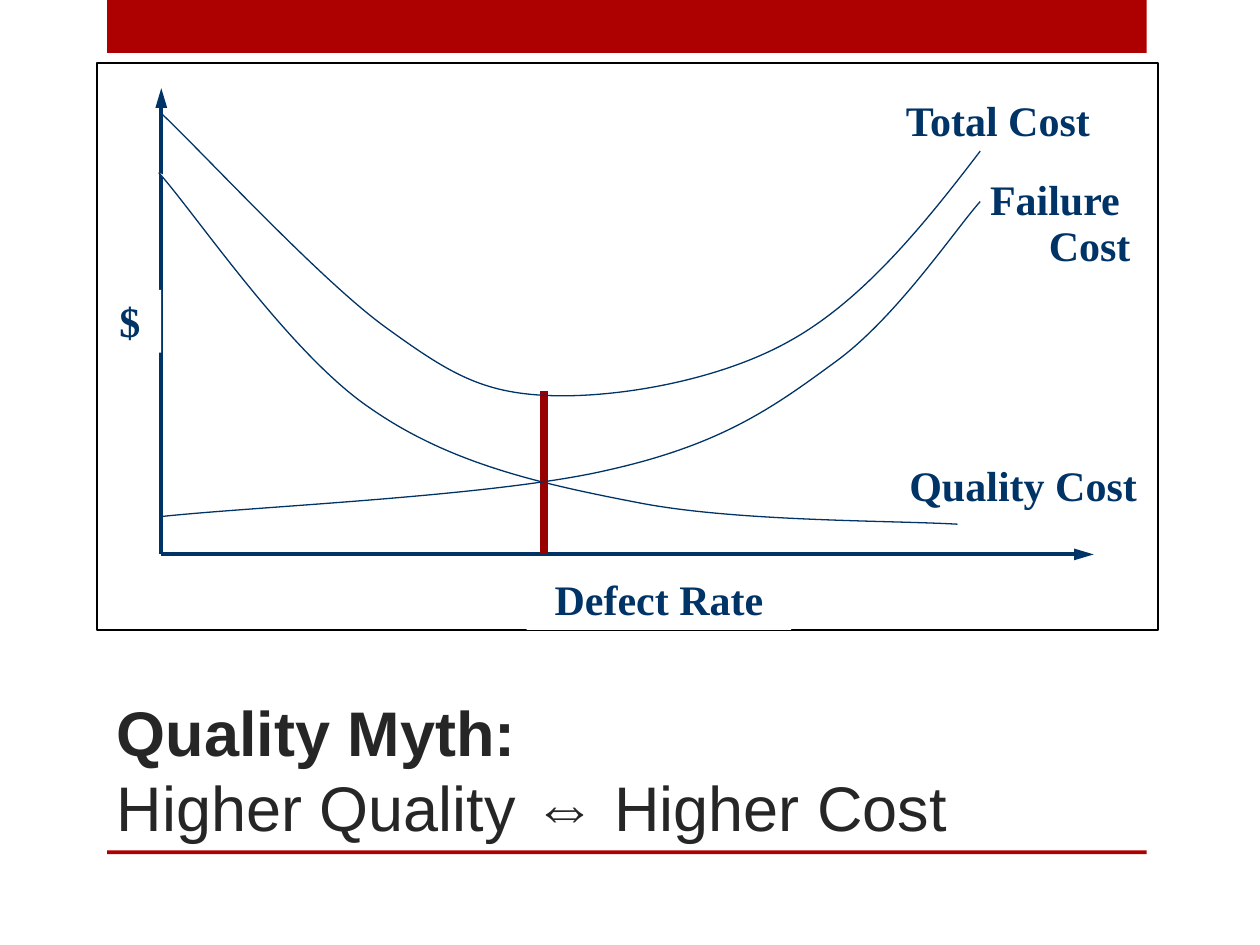
from typing import NamedTuple, Optional

from lxml.etree import SubElement as Sub
from pptx import Presentation as Deck
from pptx.dml.color import RGBColor as Rgb
from pptx.enum.shapes import MSO_CONNECTOR as Wire, MSO_SHAPE as Form
from pptx.enum.text import MSO_ANCHOR as Anchor, MSO_AUTO_SIZE as Auto, PP_ALIGN as Align
from pptx.oxml.ns import qn
from pptx.util import Pt

PX = 9144
NAVY, RED, WHITE = "003366", "AD0101", "FFFFFF"


class Box(NamedTuple):
    x: int
    y: int
    w: int
    h: int
    fill: str
    line: Optional[str] = None


class Label(NamedTuple):
    x: int
    y: int
    w: int
    h: int
    lines: tuple
    fill: Optional[str] = None
    align: Align = Align.CENTER
    pitch: Optional[float] = None


class Line(NamedTuple):
    start: tuple
    end: tuple
    color: str
    width: float
    arrow: bool = False


class Curve(NamedTuple):
    points: tuple
    fill: Optional[str] = None


class Part(NamedTuple):
    text: str
    bold: bool


def px(*nums: int) -> list:
    return [n * PX for n in nums]


def hue(code: str) -> Rgb:
    return Rgb.from_string(code)


def paint(shape, fill: Optional[str], line: Optional[str] = None) -> None:
    shape.shadow.inherit = False
    if fill:
        shape.fill.solid()
        shape.fill.fore_color.rgb = hue(fill)
    else:
        shape.fill.background()
    if line:
        shape.line.color.rgb = hue(line)
        shape.line.width = Pt(0.75)
    else:
        shape.line.fill.background()


def write(para, text: str, size: int, face: str, color: str, bold: bool) -> None:
    run = para.add_run()
    run.text = text
    font = run.font
    font.size, font.name, font.bold = Pt(size), face, bold
    font.color.rgb = hue(color)


def add_box(slide, box: Box) -> None:
    shape = slide.shapes.add_shape(Form.RECTANGLE, *px(*box[:4]))
    paint(shape, box.fill, box.line)


def add_label(slide, label: Label) -> None:
    area = px(*label[:4])
    if label.fill:
        shape = slide.shapes.add_shape(Form.RECTANGLE, *area)
        paint(shape, label.fill)
    else:
        shape = slide.shapes.add_textbox(*area)
    frame = shape.text_frame
    frame.word_wrap = True
    frame.auto_size = Auto.SHAPE_TO_FIT_TEXT
    frame.vertical_anchor = Anchor.TOP
    for i, text in enumerate(label.lines):
        para = frame.add_paragraph() if i else frame.paragraphs[0]
        para.alignment = label.align
        gap = Sub(para._p.get_or_add_pPr(), qn("a:spcBef"))
        Sub(gap, qn("a:spcPct")).set("val", "50000")
        if label.pitch:
            para.line_spacing = label.pitch
        write(para, text, 24, "Times New Roman", NAVY, True)


def add_line(slide, line: Line) -> None:
    wire = slide.shapes.add_connector(Wire.STRAIGHT, *px(*line.start, *line.end))
    wire.line.color.rgb = hue(line.color)
    wire.line.width = Pt(line.width)
    if line.arrow:
        tip = Sub(wire.line._get_or_add_ln(), qn("a:tailEnd"))
        tip.set("type", "triangle")
        tip.set("len", "lg")
    Sub(wire._element.spPr, qn("a:effectLst"))


def add_curve(slide, curve: Curve) -> None:
    first, *rest = [px(*point) for point in curve.points]
    pen = slide.shapes.build_freeform(*first)
    pen.add_line_segments(rest, close=False)
    shape = pen.convert_to_shape()
    steps = list(shape._element.iter(qn("a:lnTo")))
    for i in range(0, len(steps), 3):
        bend = steps[i].makeelement(qn("a:cubicBezTo"))
        steps[i].addprevious(bend)
        for step in steps[i:i + 3]:
            bend.append(step[0])
            step.getparent().remove(step)
    paint(shape, curve.fill, NAVY)


def add_title(slide, area: tuple, parts: list) -> None:
    frame = slide.shapes.add_textbox(*px(*area)).text_frame
    frame.word_wrap = True
    frame.vertical_anchor = Anchor.BOTTOM
    para = frame.paragraphs[0]
    for i, part in enumerate(parts):
        if i == 1:
            para.add_line_break()
        write(para, part.text, 36, "Arial", "262626", part.bold)


TITLE = [Part("Quality Myth:", True), Part("Higher Quality ", False),
         Part("⇔", True), Part(" Higher Cost", False)]
FRAME = [
    Box(85, 0, 825, 42, RED),
    Box(85, 675, 825, 3, RED),
    Box(77, 50, 842, 450, WHITE, "000000"),
]
ZERO = (128, 440)
AXES = [Line(ZERO, (128, 70), NAVY, 2.25, True),
        Line(ZERO, (868, 440), NAVY, 2.25, True)]
NAMES = [Label(78, 230, 50, 50, ("$",), WHITE),
         Label(418, 450, 210, 50, ("Defect Rate",), WHITE)]
QUALITY = Curve(((126, 137), (154, 168), (230, 281), (294, 324), (357, 368),
                 (429, 384), (507, 399), (584, 414), (707, 413), (760, 416)), WHITE)
FAILURE = Curve(((778, 160), (759, 181), (711, 253), (662, 288), (613, 324),
                 (572, 353), (483, 373), (394, 394), (202, 402), (128, 410)))
TOTAL = Curve(((128, 90), (158, 118), (253, 221), (305, 259), (356, 296),
               (382, 312), (436, 314), (490, 316), (572, 302), (628, 270),
               (685, 238), (733, 179), (778, 120)))


def main() -> None:
    deck = Deck()
    deck.slide_width, deck.slide_height = px(1000, 750)
    slide = deck.slides.add_slide(deck.slide_layouts[6])
    for box in FRAME:
        add_box(slide, box)
    for axis in AXES:
        add_line(slide, axis)
    for name in NAMES:
        add_label(slide, name)
    add_curve(slide, QUALITY)
    add_label(slide, Label(707, 360, 210, 50, ("Quality Cost",), WHITE))
    add_title(slide, (83, 590, 828, 85), TITLE)
    add_line(slide, Line((432, 310), (432, 440), "990000", 4.5))
    add_curve(slide, FAILURE)
    add_label(slide, Label(757, 150, 150, 70, ("Failure ", "Cost"),
                           align=Align.RIGHT, pitch=0.5))
    add_curve(slide, TOTAL)
    add_label(slide, Label(687, 70, 210, 50, ("Total Cost",)))
    deck.save("out.pptx")


if __name__ == "__main__":
    main()
